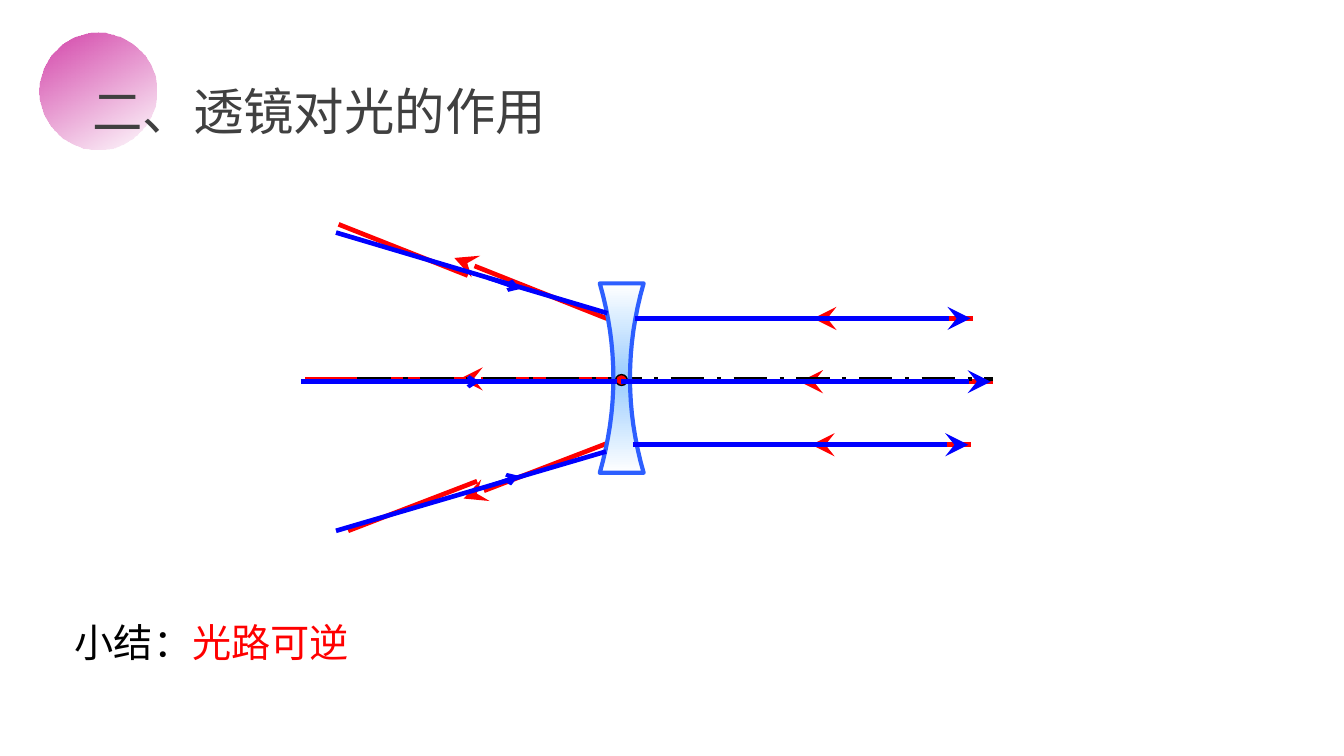
import pptx
import pptx.dml.color
import pptx.enum.dml
import pptx.enum.shapes
import pptx.enum.text
import pptx.oxml
import pptx.oxml.ns
import pptx.util

Pt = pptx.util.Pt
qn = pptx.oxml.ns.qn
COLORS = {
    "pink": "D343A9", "title": "404040", "black": "000000", "white": "FFFFFF",
    "red": "FF0000", "blue": "0000FF", "lens": "99CCFF", "lens edge": "2D5FFF",
}
FONT = "Arial"
PARALLEL_RAYS = [(50.6, 181.2, 361.2), (118.3, 180.2, 360), (84.5, 174, 372)]
SEGMENT, OVERLAP_START = 103.7, 94.5
BLUE_SHIFT = -1.2
RED_DIVERGING = [
    ((172.6, 114.7), (88.4, 147.1), (95.6, 137.8), (26.5, 164.4)),
    ((166.9, 51.4), (83.4, 18.2), (90.6, 27.6), (21.4, 0.2)),
    ((176.2, 83), (86.2, 83), (94.2, 83), (3.4, 83)),
]
BLUE_CONVERGING = [
    ((20, 4.6), (165.4, 47.8), (101.4, 29), (118.6, 34.8)),
    ((20, 164.4), (164.7, 121.9), (101.4, 140.6), (117.9, 134.9)),
    ((1.3, 84.5), (170.5, 84.5), (76.2, 84.5), (97, 84.5)),
]


def rgb(name):
    """Return the named colour."""
    return pptx.dml.color.RGBColor.from_string(COLORS[name])


def add_line(slide, box, start, end, color, width=2.5, arrow=None, size="med"):
    """Draw a line between two points of the box, with an optional arrowhead at its end."""
    left, top = box[:2]
    connector = slide.shapes.add_connector(
        pptx.enum.shapes.MSO_CONNECTOR.STRAIGHT,
        Pt(left + start[0]), Pt(top + start[1]), Pt(left + end[0]), Pt(top + end[1]))
    connector.line.color.rgb = rgb(color)
    connector.line.width = Pt(width)
    if arrow:
        tail = pptx.oxml.parse_xml(
            f'<a:tailEnd {pptx.oxml.ns.nsdecls("a")} type="{arrow}" w="{size}" len="{size}"/>')
        connector.get_or_add_ln().append(tail)
    connector.element.spPr.append(
        pptx.oxml.parse_xml(f'<a:effectLst {pptx.oxml.ns.nsdecls("a")}/>'))
    return connector


def set_gradient(shape, angle, stops):
    """Fill a shape with stops of position, colour and opacity in percent."""
    shape.fill.gradient()
    shape.fill.gradient_angle = 360 - angle
    stop_list = shape.element.find(".//" + qn("a:gsLst"))
    for stop in list(stop_list):
        stop_list.remove(stop)
    for position, color, opacity in stops:
        stop_list.append(pptx.oxml.parse_xml(
            f'<a:gs {pptx.oxml.ns.nsdecls("a")} pos="{position * 1000}">'
            f'<a:srgbClr val="{COLORS[color]}"><a:alpha val="{opacity * 1000}"/>'
            f'</a:srgbClr></a:gs>'))


def add_ellipse(slide, left, top, width, height):
    """Add an ellipse without a shadow."""
    ellipse = slide.shapes.add_shape(
        pptx.enum.shapes.MSO_SHAPE.OVAL, Pt(left), Pt(top), Pt(width), Pt(height))
    ellipse.shadow.inherit = False
    return ellipse


def write_text(shape, box, size, runs):
    """Place a text shape in the box and write its coloured runs."""
    shape.left, shape.top, shape.width, shape.height = map(Pt, box)
    frame = shape.text_frame
    frame.word_wrap = True
    frame.auto_size = pptx.enum.text.MSO_AUTO_SIZE.NONE
    frame.vertical_anchor = pptx.enum.text.MSO_ANCHOR.TOP
    frame.margin_left = frame.margin_right = Pt(5.4)
    frame.margin_top = frame.margin_bottom = Pt(2.7)
    paragraph = frame.paragraphs[0]
    paragraph.alignment = pptx.enum.text.PP_ALIGN.LEFT
    for text, color in runs:
        run = paragraph.add_run()
        run.text = text
        run.font.name = FONT
        run.font.size = Pt(size)
        run.font.color.rgb = rgb(color)


def add_heading(slide, box):
    """Place the title over a fading circle."""
    left, top, width, height = box
    title = slide.shapes.title
    circle = add_ellipse(slide, left, top, 63, 63)
    set_gradient(circle, 60, [(0, "pink", 100), (100, "pink", 0)])
    circle.line.fill.background()
    title.element.addprevious(circle.element)
    write_text(title, (left + 23, top + 23, width - 23, height - 23), 27,
               [("二、透镜对光的作用", "title")])


def add_lens(slide, box, waist=7.3, steps=16):
    """Draw a concave lens that fills the box."""
    left, top, width, height = box
    side = []
    for step in range(steps + 1):
        part = step / steps
        side.append((waist * 4 * part * (1 - part), top + height * part))
    right_edge = [(left + width - inset, y) for inset, y in side]
    left_edge = [(left + inset, y) for inset, y in reversed(side)]
    points = [(Pt(x), Pt(y)) for x, y in right_edge + left_edge]
    builder = slide.shapes.build_freeform(*points[0])
    builder.add_line_segments(points[1:], close=True)
    lens = builder.convert_to_shape()
    lens.shadow.inherit = False
    set_gradient(lens, 90, [(0, "white", 100), (50, "lens", 100), (100, "white", 100)])
    lens.line.color.rgb = rgb("lens edge")
    lens.line.width = Pt(2.25)


def add_red_rays(slide, box):
    """Draw the rays that run leftwards and spread behind the lens."""
    for y, start, end in PARALLEL_RAYS:
        add_line(slide, box, (start, y), (start + SEGMENT, y), "red")
        add_line(slide, box, (end, y), (start + OVERLAP_START, y), "red",
                 arrow="stealth", size="lg")
    for start, head, overlap, end in RED_DIVERGING:
        add_line(slide, box, start, head, "red", arrow="stealth", size="lg")
        add_line(slide, box, overlap, end, "red")


def add_blue_rays(slide, box):
    """Draw the reversed rays that run rightwards and leave the lens parallel."""
    for y, start, end in PARALLEL_RAYS:
        start, end = start + BLUE_SHIFT, end + BLUE_SHIFT
        add_line(slide, box, (start, y), (start + SEGMENT, y), "blue")
        add_line(slide, box, (start + OVERLAP_START, y), (end, y), "blue",
                 arrow="stealth", size="lg")
    for start, end, arrow_start, arrow_end in BLUE_CONVERGING:
        add_line(slide, box, start, end, "blue")
        add_line(slide, box, arrow_start, arrow_end, "blue", 2, "arrow")


def add_diagram(slide, box):
    """Draw the lens on its axis with both sets of rays."""
    left, top = box[:2]
    add_red_rays(slide, box)
    axis = add_line(slide, box, (31.5, 83), (box[2], 83), "black", 2.25)
    axis.line.dash_style = pptx.enum.dml.MSO_LINE.LONG_DASH_DOT
    add_lens(slide, (left + 161.3, top + 31.8, 23.5, 101.5))
    center = add_ellipse(slide, left + 169.8, top + 80.7, 6.3, 5.8)
    center.fill.solid()
    center.fill.fore_color.rgb = rgb("red")
    center.line.color.rgb = rgb("black")
    center.line.width = Pt(0.75)
    add_blue_rays(slide, box)


def add_summary(slide, box):
    """Write the conclusion line."""
    text_box = slide.shapes.add_textbox(*map(Pt, box))
    write_text(text_box, box, 21, [("小结：", "black"), ("光路可逆", "red")])


def main():
    """Build and save the slide."""
    presentation = pptx.Presentation()
    presentation.slide_width, presentation.slide_height = Pt(720), Pt(405)
    slide = presentation.slides.add_slide(presentation.slide_layouts[5])
    add_heading(slide, (21, 17.3, 283, 61))
    add_diagram(slide, (160, 120, 372, 165))
    add_summary(slide, (34.6, 328.3, 258.5, 31))
    presentation.save("out.pptx")


if __name__ == "__main__":
    main()
